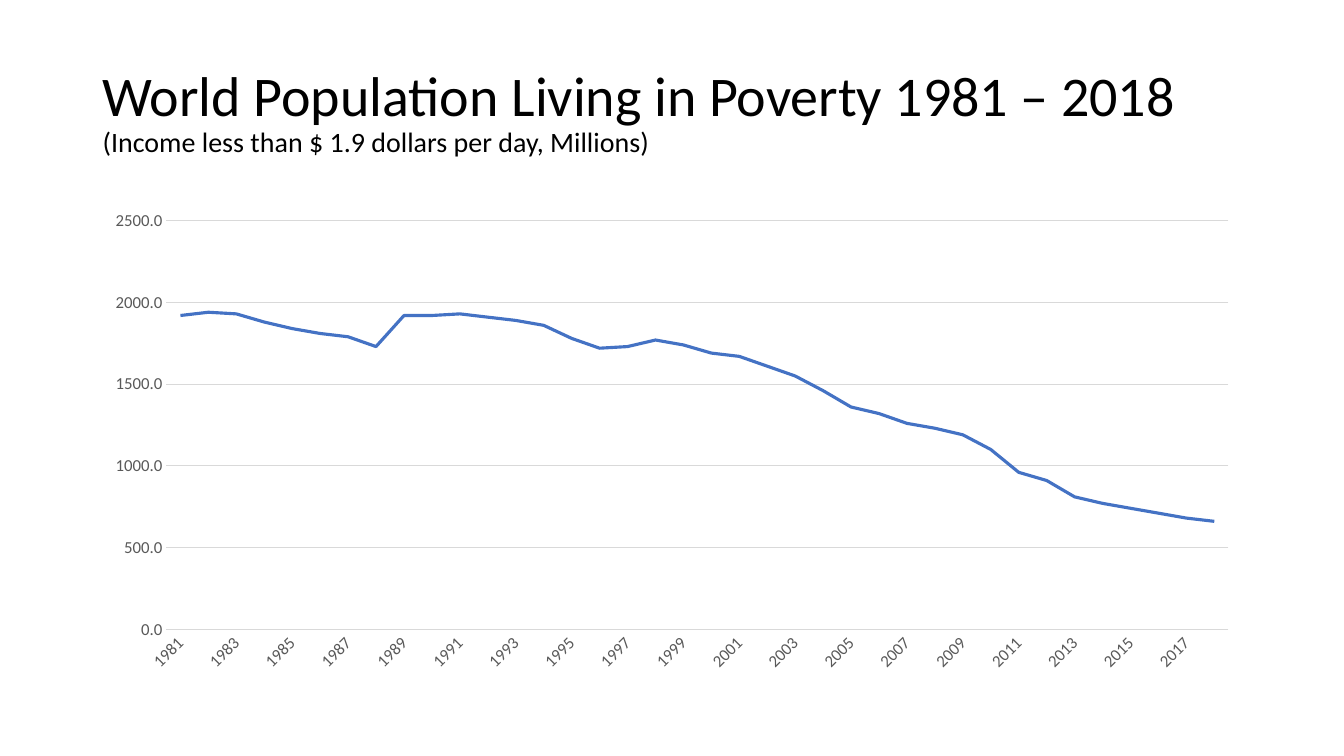
import lxml.etree
import pptx
import pptx.chart.data
import pptx.dml.color
import pptx.enum.chart
import pptx.enum.text
import pptx.oxml.ns
import pptx.util
from pptx.util import Cm

FONT = "Calibri"
BLACK = pptx.dml.color.RGBColor(0x00, 0x00, 0x00)
LABEL_GREY = pptx.dml.color.RGBColor(0x59, 0x59, 0x59)
GRID_GREY = pptx.dml.color.RGBColor(0xD9, 0xD9, 0xD9)
LINE_BLUE = pptx.dml.color.RGBColor(0x44, 0x72, 0xC4)

FIRST_YEAR = 1981
POVERTY_MILLIONS = [
    1920, 1940, 1930, 1880, 1840, 1810, 1790, 1730, 1920, 1920,
    1930, 1910, 1890, 1860, 1780, 1720, 1730, 1770, 1740, 1690,
    1670, 1610, 1550, 1460, 1360, 1320, 1260, 1230, 1190, 1100,
    960, 910, 810, 770, 740, 710, 680, 660,
]


def style_font(font, size, color):
    """Apply the slide font with a size in points and a colour."""
    font.name = FONT
    font.size = pptx.util.Pt(size)
    font.color.rgb = color


def style_line(line, width, color):
    """Give a line a width in points and a colour."""
    line.width = pptx.util.Pt(width)
    line.color.rgb = color


def add_heading(s, left, top, width, height):
    """Fill the title placeholder with the heading and its subtitle."""
    sp = s.shapes.title
    sp.left, sp.top, sp.width, sp.height = left, top, width, height
    tf = sp.text_frame
    tf.word_wrap = True
    tf.auto_size = pptx.enum.text.MSO_AUTO_SIZE.NONE
    tf.vertical_anchor = pptx.enum.text.MSO_ANCHOR.MIDDLE
    p = tf.paragraphs[0]
    p.text = ("World Population Living in Poverty 1981 – 2018\v"
              "(Income less than $ 1.9 dollars per day, Millions)")
    p.alignment = pptx.enum.text.PP_ALIGN.LEFT
    p.line_spacing = 0.9
    for r, size in zip(p.runs, (40, 20)):
        style_font(r.font, size, BLACK)
    br = p._p.find(pptx.oxml.ns.qn("a:br"))
    lxml.etree.SubElement(br, pptx.oxml.ns.qn("a:rPr"), sz="4000")


def add_poverty_chart(s, left, top, width, height):
    """Draw the yearly poverty figures as a line chart."""
    data = pptx.chart.data.CategoryChartData(number_format="0.0")
    data.categories = [str(FIRST_YEAR + i) for i in range(len(POVERTY_MILLIONS))]
    data.add_series("Series 1", POVERTY_MILLIONS)
    chart = s.shapes.add_chart(
        pptx.enum.chart.XL_CHART_TYPE.LINE, left, top, width, height, data
    ).chart
    chart.has_title = False
    chart.has_legend = False
    style_font(chart.font, 10, BLACK)

    plot = chart.plots[0]
    plot.vary_by_categories = False
    series = plot.series[0]
    series.smooth = False
    style_line(series.format.line, 2.25, LINE_BLUE)

    years, millions = chart.category_axis, chart.value_axis
    for axis in (years, millions):
        axis.major_tick_mark = pptx.enum.chart.XL_TICK_MARK.NONE
        axis.minor_tick_mark = pptx.enum.chart.XL_TICK_MARK.NONE
        style_font(axis.tick_labels.font, 12, LABEL_GREY)
    years.has_major_gridlines = False
    style_line(years.format.line, 0.75, GRID_GREY)
    body = years._element.find(".//" + pptx.oxml.ns.qn("a:bodyPr"))
    body.set("rot", "-2700000")
    body.set("vert", "horz")

    millions.minimum_scale, millions.maximum_scale = 0, 2500
    millions.major_unit = 500
    millions.tick_labels.number_format = "0.0"
    millions.tick_labels.number_format_is_linked = False
    millions.has_major_gridlines = True
    style_line(millions.major_gridlines.format.line, 0.75, GRID_GREY)
    millions.format.line.fill.background()


def main():
    """Build the slide and save the presentation."""
    prs = pptx.Presentation()
    prs.slide_width, prs.slide_height = Cm(33.87), Cm(19.05)
    s = prs.slides.add_slide(prs.slide_layouts[5])
    left, width = Cm(2.33), Cm(29.21)
    add_heading(s, left, Cm(1.01), width, Cm(3.68))
    add_poverty_chart(s, left, Cm(5.07), width, Cm(12.09))
    prs.save("out.pptx")


if __name__ == "__main__":
    main()
